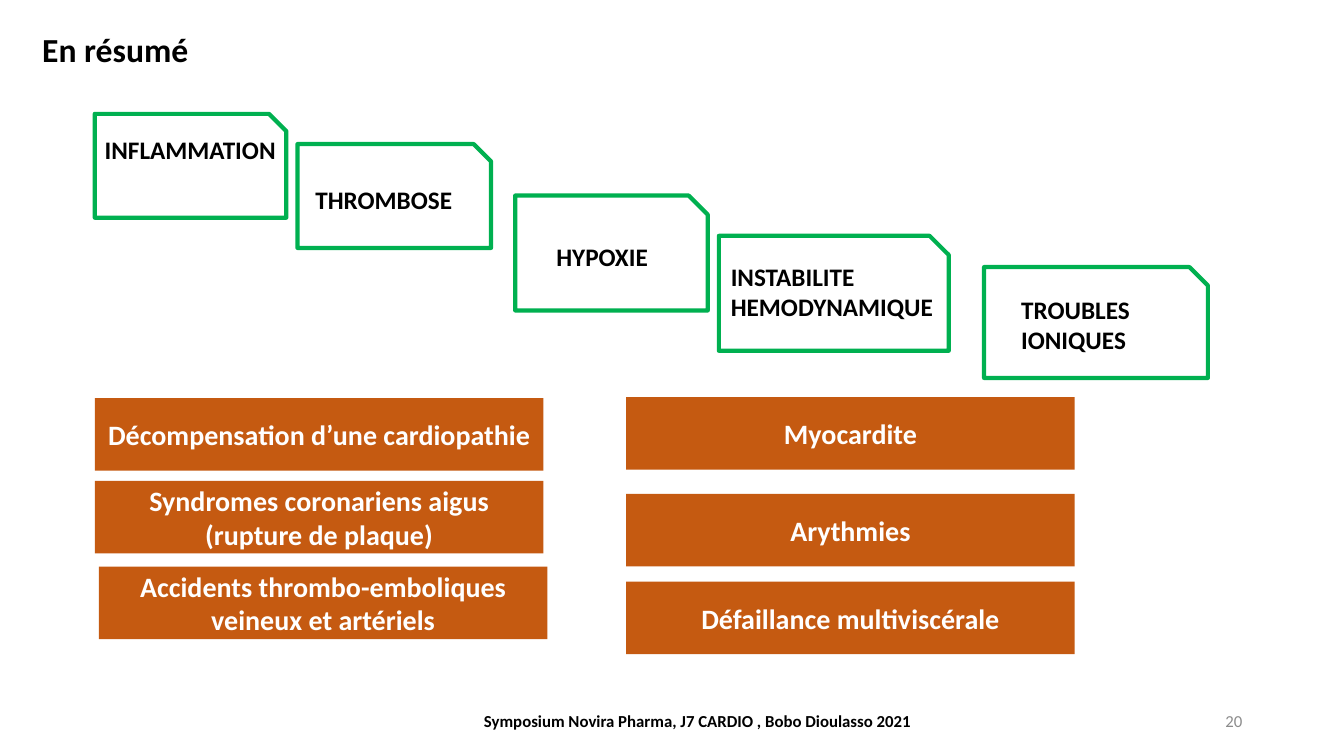
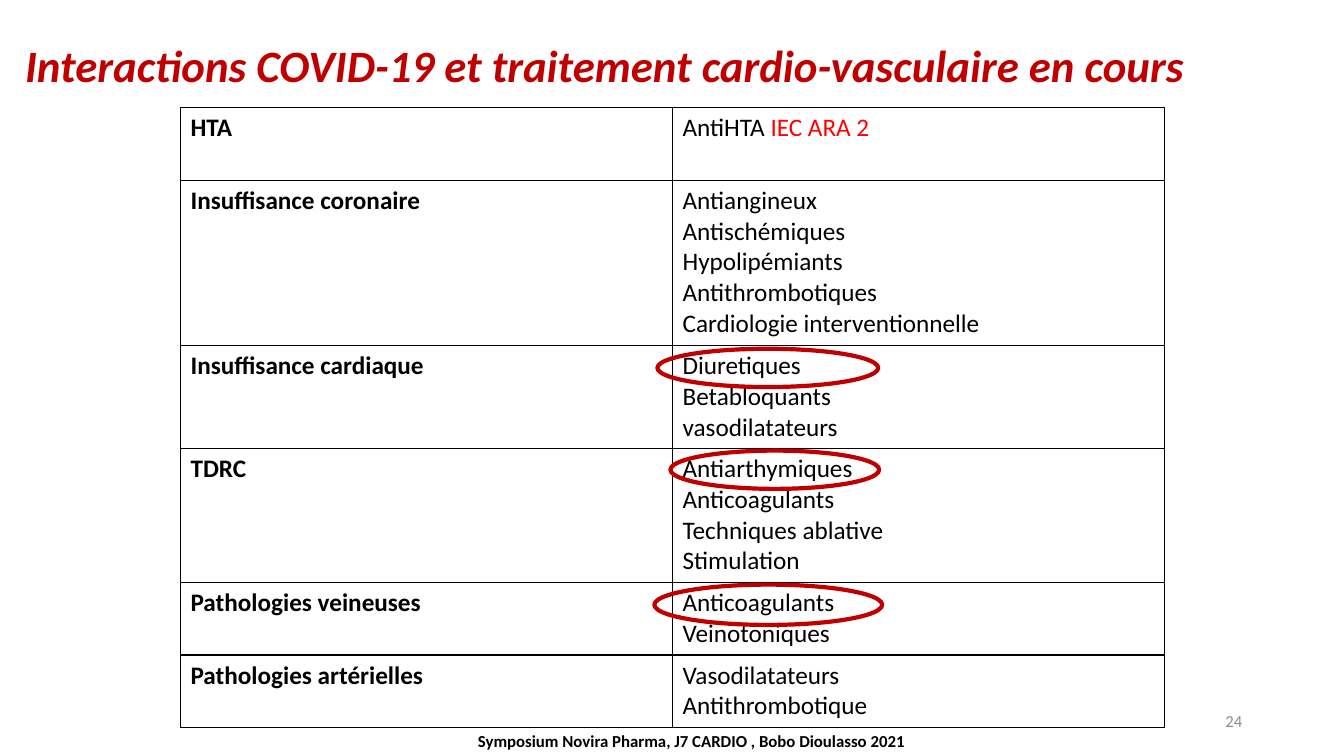
from lxml.etree import SubElement
from pptx import Presentation
from pptx.dml.color import RGBColor
from pptx.enum.shapes import MSO_SHAPE as Shape
from pptx.enum.text import MSO_ANCHOR as Anchor, PP_ALIGN as Align
from pptx.oxml.ns import qn
from pptx.util import Inches, Pt

COLORS = {
    "ink": "000000",
    "paper": "FFFFFF",
    "grey": "8C8C8C",
    "orange": "C55A11",
    "green": "00B050",
    "crimson": "C00000",
    "red": "FF0000",
}
FONT = "Calibri"
FOOTER = "Symposium Novira Pharma, J7 CARDIO , Bobo Dioulasso 2021"


def color(name):
    return RGBColor.from_string(COLORS[name])


class Deck:
    """Holds the shared style and the current slide."""

    def __init__(self):
        self.prs = Presentation()
        self.prs.slide_width = Inches(13.33)
        self.prs.slide_height = Inches(7.5)
        self.slide = None

    def new_slide(self, number, footer_left, footer_top):
        self.slide = self.prs.slides.add_slide(self.prs.slide_layouts[6])
        self.text(FOOTER, footer_left, footer_top, 5, 0.4, 12,
                  align=Align.CENTER, anchor=Anchor.MIDDLE)
        self.text(str(number), 9.42, 6.95, 3, 0.4, 12, "grey", bold=False,
                  align=Align.RIGHT, anchor=Anchor.MIDDLE)

    def style(self, run, size, ink="ink", bold=True, italic=False):
        font = run.font
        font.name, font.size = FONT, Pt(size)
        font.bold, font.italic = bold, italic
        font.color.rgb = color(ink)

    def fill_frame(self, frame, words, size, ink="ink", bold=True,
                   italic=False, align=Align.LEFT, anchor=Anchor.TOP,
                   spacing=None):
        frame.text = words
        frame.word_wrap = True
        frame.vertical_anchor = anchor
        for paragraph in frame.paragraphs:
            paragraph.alignment = align
            if spacing:
                paragraph.line_spacing = spacing
            for run in paragraph.runs:
                self.style(run, size, ink, bold, italic)

    def text(self, words, left, top, width, height, size, ink="ink", **options):
        box = self.slide.shapes.add_textbox(
            Inches(left), Inches(top), Inches(width), Inches(height))
        self.fill_frame(box.text_frame, words, size, ink, **options)

    def shape(self, kind, left, top, width, height):
        shape = self.slide.shapes.add_shape(
            kind, Inches(left), Inches(top), Inches(width), Inches(height))
        shape.shadow.inherit = False
        return shape

    def outline(self, kind, place, ink):
        shape = self.shape(kind, *place)
        shape.fill.background()
        shape.line.color.rgb = color(ink)
        shape.line.width = Pt(3)

    def banner(self, words, left, top):
        banner = self.shape(Shape.RECTANGLE, left, top, 4.45, 0.72)
        banner.fill.solid()
        banner.fill.fore_color.rgb = color("orange")
        banner.line.fill.background()
        self.fill_frame(banner.text_frame, words, 20, "paper",
                        align=Align.CENTER, anchor=Anchor.MIDDLE)

    def cell(self, cell, words, bold):
        self.fill_frame(cell.text_frame, words, 18, bold=bold)
        properties = cell._tc.get_or_add_tcPr()
        for side in ("a:lnL", "a:lnR", "a:lnT", "a:lnB"):
            border = SubElement(properties, qn(side), w=str(Pt(1)))
            fill = SubElement(border, qn("a:solidFill"))
            SubElement(fill, qn("a:srgbClr"), val=COLORS["ink"])
        cell.fill.background()

    def table(self, rows, left, top, column_width):
        height = sum(row_height for row_height, _, _ in rows)
        table = self.slide.shapes.add_table(
            len(rows), 2, Inches(left), Inches(top),
            Inches(2 * column_width), Inches(height)).table
        table.first_row = table.horz_banding = False
        for column in table.columns:
            column.width = Inches(column_width)
        for index, (row_height, disease, treatments) in enumerate(rows):
            table.rows[index].height = Inches(row_height)
            self.cell(table.cell(index, 0), disease, bold=True)
            self.cell(table.cell(index, 1), "\n".join(treatments), bold=False)
        return table


def build_summary(deck):
    deck.new_slide(20, 4.42, 6.95)
    deck.text("En résumé", 0.32, 0.24, 3.74, 0.5, 24)

    # Descending steps: frame, then label with its left, top, width, height
    mechanisms = [
        ((0.94, 1.13, 1.9, 1.03), "INFLAMMATION", (0.94, 1.28, 2.03, 0.4)),
        ((2.95, 1.43, 1.92, 1.03), "THROMBOSE", (3.03, 1.78, 2.03, 0.4)),
        ((5.11, 1.94, 1.91, 1.14), "HYPOXIE", (5.42, 2.34, 2.03, 0.4)),
        ((7.13, 2.34, 2.28, 1.14), "INSTABILITE HEMODYNAMIQUE",
         (7.15, 2.54, 2.56, 0.71)),
        ((9.76, 2.65, 2.22, 1.1), "TROUBLES IONIQUES",
         (10.03, 2.87, 2.16, 0.71)),
    ]
    for frame, label, label_place in mechanisms:
        deck.outline(Shape.SNIP_1_RECTANGLE, frame, "green")
        deck.text(label, *label_place, 18)

    # Cardiac complications
    complications = [
        ("Décompensation d’une cardiopathie", 0.94, 3.95),
        ("Syndromes coronariens aigus (rupture de plaque)", 0.94, 4.77),
        ("Accidents thrombo-emboliques veineux et artériels", 0.98, 5.62),
        ("Myocardite", 6.21, 3.94),
        ("Arythmies", 6.21, 4.9),
        ("Défaillance multiviscérale", 6.21, 5.77),
    ]
    for complication in complications:
        deck.banner(*complication)


def build_interactions(deck):
    deck.new_slide(24, 4.36, 7.15)
    deck.text("Interactions COVID-19 et traitement cardio-vasculaire en cours",
              0.15, 0, 12.39, 1.35, 32, "crimson", italic=True,
              anchor=Anchor.MIDDLE, spacing=0.9)

    # Row height, disease, treatments
    treatments = deck.table([
        (0.72, "HTA", ["AntiHTA "]),
        (1.64, "Insuffisance coronaire",
         ["Antiangineux", "Antischémiques", "Hypolipémiants",
          "Antithrombotiques", "Cardiologie interventionnelle"]),
        (1.02, "Insuffisance cardiaque",
         ["Diuretiques", "Betabloquants", "vasodilatateurs"]),
        (1.33, "TDRC",
         ["Antiarthymiques", "Anticoagulants", "Techniques ablative",
          "Stimulation"]),
        (0.72, "Pathologies veineuses", ["Anticoagulants", "Veinotoniques"]),
        (0.72, "Pathologies artérielles",
         ["Vasodilatateurs", "Antithrombotique"]),
    ], 1.79, 1.07, 4.88)
    inhibitors = treatments.cell(0, 1).text_frame.paragraphs[0].add_run()
    inhibitors.text = "IEC ARA 2"
    deck.style(inhibitors, 18, "red", bold=False)

    # Rings around the treatments that interact
    for ring in [(6.52, 3.46, 2.19, 0.38), (6.65, 4.47, 2.07, 0.38),
                 (6.49, 5.8, 2.26, 0.4)]:
        deck.outline(Shape.OVAL, ring, "crimson")


def main():
    deck = Deck()
    build_summary(deck)
    build_interactions(deck)
    deck.prs.save("out.pptx")


if __name__ == "__main__":
    main()
